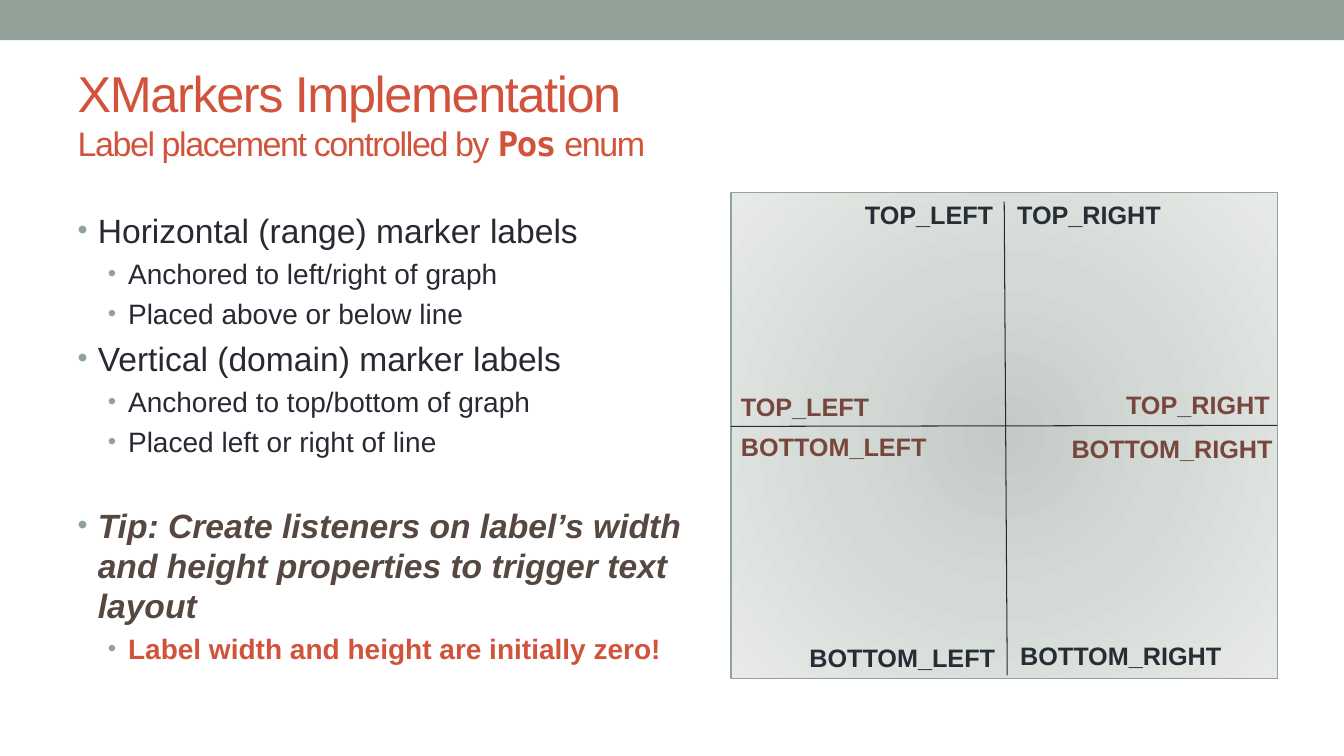
from dataclasses import dataclass

from lxml.etree import SubElement
from pptx import Presentation
from pptx.dml.color import RGBColor
from pptx.enum.shapes import MSO_CONNECTOR, MSO_SHAPE
from pptx.enum.text import MSO_ANCHOR, MSO_AUTO_SIZE, PP_ALIGN
from pptx.oxml.ns import qn
from pptx.util import Inches, Pt


@dataclass(frozen=True)
class Theme:
    font: str = "Arial"
    code_font: str = "DejaVu Sans Mono"
    sage: str = "93A299"
    accent: str = "D2533C"
    ink: str = "292934"
    tip: str = "564841"
    range_label: str = "79463D"
    domain_label: str = "262D35"
    title_size: float = 36
    subtitle_size: float = 24.3
    level_sizes: tuple = (24, 20)
    label_size: float = 18
    graph_stops: tuple = ((0, "C4CAC6"), (45, "D3DAD6"), (100, "E7EAE8"))


THEME = Theme()

TITLE = "XMarkers Implementation"
SUBTITLE = [("Label placement controlled by ", False), ("Pos", True), (" enum", False)]

# level, text, colour, bold, italic
BULLETS = [
    (0, "Horizontal (range) marker labels", THEME.ink, False, False),
    (1, "Anchored to left/right of graph", THEME.ink, False, False),
    (1, "Placed above or below line", THEME.ink, False, False),
    (0, "Vertical (domain) marker labels", THEME.ink, False, False),
    (1, "Anchored to top/bottom of graph", THEME.ink, False, False),
    (1, "Placed left or right of line", THEME.ink, False, False),
    (0, "Tip: Create listeners on label’s width and height properties "
        "to trigger text layout", THEME.tip, True, True),
    (1, "Label width and height are initially zero!", THEME.accent, True, False),
]
TIP_INDEX = 6
TIP_GAP = 33
LEVEL_INDENTS = (0.2, 0.5)
HANGING = 0.2

LABEL_WIDTHS = {"TOP_LEFT": 1.47, "TOP_RIGHT": 1.64,
                "BOTTOM_LEFT": 2.06, "BOTTOM_RIGHT": 2.2}
RANGE_LABELS = [("TOP_LEFT", 7.25, 3.83), ("TOP_RIGHT", 11.07, 3.81),
                ("BOTTOM_LEFT", 7.25, 4.23), ("BOTTOM_RIGHT", 10.53, 4.25)]
DOMAIN_LABELS = [("TOP_LEFT", 8.48, 1.93), ("TOP_RIGHT", 9.99, 1.93),
                 ("BOTTOM_LEFT", 7.93, 6.32), ("BOTTOM_RIGHT", 10.02, 6.3)]
MARKER_LINES = [(9.96, 2, 9.99, 6.7), (7.25, 4.23, 12.67, 4.22)]


def rgb(colour):
    return RGBColor.from_string(colour)


def style(font, size, colour, bold=False, italic=False, name=THEME.font):
    font.name, font.size = name, Pt(size)
    font.bold, font.italic = bold, italic
    font.color.rgb = rgb(colour)


def place(shape, left, top, width, height):
    shape.left, shape.top = Inches(left), Inches(top)
    shape.width, shape.height = Inches(width), Inches(height)


def add_rectangle(slide, left, top, width, height):
    shape = slide.shapes.add_shape(
        MSO_SHAPE.RECTANGLE, Inches(left), Inches(top), Inches(width), Inches(height))
    shape.shadow.inherit = False
    return shape


def fill_radial(shape, stops):
    """Fill the shape with a circular gradient that starts at its centre."""
    shape.fill.gradient()
    gradient = shape._element.spPr.find(qn("a:gradFill"))
    for child in list(gradient):
        gradient.remove(child)
    stop_list = SubElement(gradient, qn("a:gsLst"))
    for position, colour in stops:
        stop = SubElement(stop_list, qn("a:gs"), pos=str(position * 1000))
        SubElement(stop, qn("a:srgbClr"), val=colour)
    circle = SubElement(gradient, qn("a:path"), path="circle")
    SubElement(circle, qn("a:fillToRect"),
               {side: "100000" for side in ("l", "t", "r", "b")})


def add_bullet(paragraph, level):
    properties = paragraph._p.get_or_add_pPr()
    properties.set("marL", str(Inches(LEVEL_INDENTS[level])))
    properties.set("indent", str(-Inches(HANGING)))
    colour = SubElement(properties, qn("a:buClr"))
    SubElement(colour, qn("a:srgbClr"), val=THEME.sage)
    SubElement(properties, qn("a:buSzPct"), val="85000")
    SubElement(properties, qn("a:buFont"), typeface=THEME.font)
    SubElement(properties, qn("a:buChar"), char="•")


def fill_title(title):
    place(title, 0.67, 0.58, 12, 1.08)
    frame = title.text_frame
    frame.auto_size = MSO_AUTO_SIZE.NONE
    frame.vertical_anchor = MSO_ANCHOR.MIDDLE
    paragraph = frame.paragraphs[0]
    paragraph.alignment = PP_ALIGN.LEFT
    heading = paragraph.add_run()
    heading.text = TITLE
    style(heading.font, THEME.title_size, THEME.accent)
    paragraph.add_line_break()
    for text, is_code in SUBTITLE:
        run = paragraph.add_run()
        run.text = text
        style(run.font, THEME.subtitle_size, THEME.accent, bold=is_code,
              name=THEME.code_font if is_code else THEME.font)
    for run in paragraph.runs:
        run._r.get_or_add_rPr().set("spc", "-100")


def fill_body(body):
    place(body, 0.67, 1.83, 6.52, 5.16)
    frame = body.text_frame
    frame.auto_size = MSO_AUTO_SIZE.NONE
    for index, (level, text, colour, bold, italic) in enumerate(BULLETS):
        paragraph = frame.paragraphs[0] if index == 0 else frame.add_paragraph()
        paragraph.text = text
        paragraph.level = level
        size = THEME.level_sizes[level]
        paragraph.line_spacing = 1.5 if index == 0 else 1.0
        if index:
            paragraph.space_before = Pt(TIP_GAP if index == TIP_INDEX else 0.23 * size)
        else:
            paragraph.space_before = Pt(0)
        add_bullet(paragraph, level)
        style(paragraph.font, size, colour, bold, italic)


def add_marker_line(slide, ends):
    line = slide.shapes.add_connector(
        MSO_CONNECTOR.STRAIGHT, *(Inches(value) for value in ends))
    line.line.color.rgb = rgb(THEME.ink)
    line.line.width = Pt(0.75)
    SubElement(line._element.spPr, qn("a:effectLst"))


def add_label(slide, text, left, top, colour):
    box = slide.shapes.add_textbox(
        Inches(left), Inches(top), Inches(LABEL_WIDTHS[text]), Inches(0.4))
    frame = box.text_frame
    frame.word_wrap = False
    frame.auto_size = MSO_AUTO_SIZE.SHAPE_TO_FIT_TEXT
    paragraph = frame.paragraphs[0]
    paragraph.text = text
    style(paragraph.font, THEME.label_size, colour, bold=True)


def main():
    presentation = Presentation()
    presentation.slide_width, presentation.slide_height = Inches(13.33), Inches(7.5)
    slide = presentation.slides.add_slide(presentation.slide_layouts[1])

    band = add_rectangle(slide, 0, 0, 13.33, 0.4)
    band.fill.solid()
    band.fill.fore_color.rgb = rgb(THEME.sage)
    band.line.fill.background()

    graph = add_rectangle(slide, 7.25, 1.91, 5.42, 4.82)
    fill_radial(graph, THEME.graph_stops)
    graph.line.color.rgb = rgb(THEME.sage)
    graph.line.width = Pt(0.75)

    fill_title(slide.shapes.title)
    fill_body(slide.placeholders[1])
    for ends in MARKER_LINES:
        add_marker_line(slide, ends)
    for labels, colour in ((RANGE_LABELS, THEME.range_label),
                           (DOMAIN_LABELS, THEME.domain_label)):
        for text, left, top in labels:
            add_label(slide, text, left, top, colour)

    presentation.save("out.pptx")


if __name__ == "__main__":
    main()
